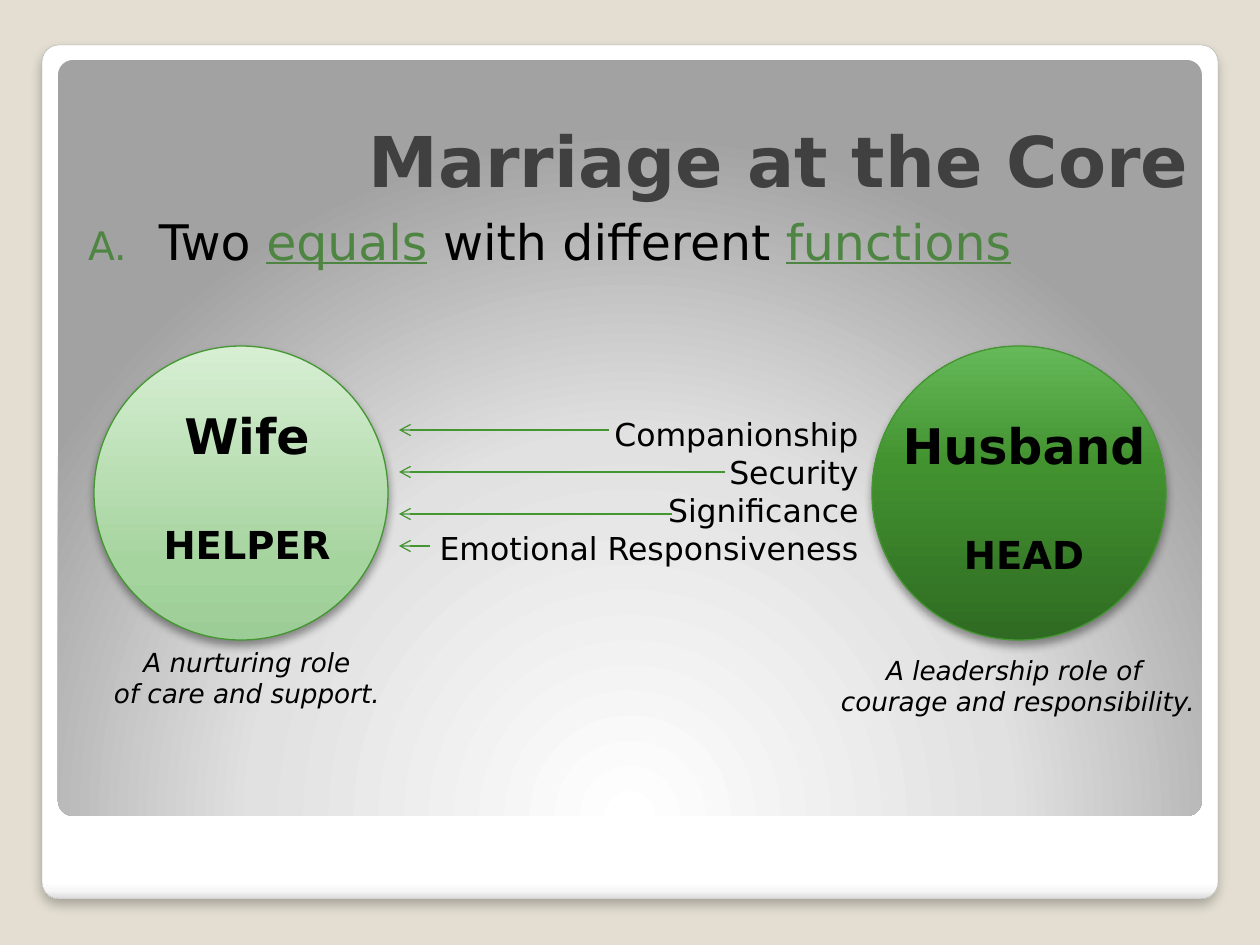
from lxml.etree import SubElement
from pptx import Presentation
from pptx.dml.color import RGBColor
from pptx.enum.shapes import MSO_CONNECTOR, MSO_SHAPE
from pptx.enum.text import MSO_ANCHOR, PP_ALIGN
from pptx.oxml import parse_xml
from pptx.oxml.ns import nsdecls, qn
from pptx.util import Emu, Pt

FONT = "DejaVu Sans"
COLORS = {"back": "E3DED1", "title": "404040", "text": "000000", "accent": "4E8542",
          "green": "439631", "edge": "A4A4A4"}

TITLE = "Marriage at the Core"
POINT = [("Two ", False), ("equals", True), (" with different ", False), ("functions", True)]

LINEAR = '<a:lin ang="{}" scaled="0"/>'
CARD_STOPS = [(0, "FFFFFF"), (98, "FFFFFF"), (99, "F7F7F7"), (100, "DADADA")]
PANEL_STOPS = [(0, "FFFFFF"), (55, "E1E1E1"), (100, "A2A2A2")]
PANEL_PATH = ('<a:path path="circle"><a:fillToRect l="50000" t="175000" '
              'r="50000" b="-75000"/></a:path>')

CIRCLE_TOP, CIRCLE_SIZE = 346, 294
ROLES = [
    {"circle_left": 94, "stops": [(0, "9DCD96"), (25, "A5D49E"), (100, "D7EED3")],
     "name": "Wife", "function": "HELPER", "name_box": (126, 399, 242, 178),
     "caption": ["A nurturing role", "of care and support."],
     "caption_box": (63, 640, 368, 77)},
    {"circle_left": 872, "stops": [(0, "2F6B22"), (60, "429230"), (100, "66B959")],
     "name": "Husband", "function": "HEAD", "name_box": (882, 409, 284, 178),
     "caption": ["A leadership role of", " courage and responsibility."],
     "caption_box": (809, 648, 410, 77)},
]

ARROW_END = 399
NEEDS = [("Companionship", 609, 430), ("Security", 725, 472),
         ("Significance", 672, 514), ("Emotional Responsiveness", 430, 546)]


def px(n):
    return Emu(round(n * 914400 / 126))


def color(key):
    return RGBColor.from_string(COLORS[key])


def style(run, size, key="text", bold=False, italic=False):
    font = run.font
    font.name, font.size, font.bold, font.italic = FONT, Pt(size), bold, italic
    font.color.rgb = color(key)


def add_panel(slide, kind, box, stops, direction, edge=None, shadow=None):
    panel = slide.shapes.add_shape(kind, *map(px, box))
    if kind == MSO_SHAPE.ROUNDED_RECTANGLE:
        panel.adjustments[0] = 0.02
    panel.fill.background()
    props = panel._element.spPr
    stop_xml = "".join(f'<a:gs pos="{pos * 1000}"><a:srgbClr val="{rgb}"/></a:gs>'
                       for pos, rgb in stops)
    gradient = parse_xml(f'<a:gradFill {nsdecls("a")} rotWithShape="1">'
                         f'<a:gsLst>{stop_xml}</a:gsLst>{direction}</a:gradFill>')
    props.replace(props.find(qn("a:noFill")), gradient)
    if edge:
        panel.line.color.rgb, panel.line.width = color(edge[0]), Pt(edge[1])
    else:
        panel.line.fill.background()
    panel.shadow.inherit = False
    if shadow:
        alpha, blur, distance = shadow
        props.find(qn("a:effectLst")).append(parse_xml(
            f'<a:outerShdw {nsdecls("a")} blurRad="{Pt(blur)}" dist="{Pt(distance)}" '
            f'dir="5400000" rotWithShape="0"><a:srgbClr val="000000">'
            f'<a:alpha val="{alpha * 1000}"/></a:srgbClr></a:outerShdw>'))


def add_lines(slide, box, lines, sizes, align, **look):
    frame = slide.shapes.add_textbox(*map(px, box)).text_frame
    frame.word_wrap = True
    frame.text = "\n".join(lines)
    for paragraph, size in zip(frame.paragraphs, sizes):
        paragraph.alignment = align
        style(paragraph.runs[0], size, **look)
    return frame


def add_arrow(slide, start, y):
    arrow = slide.shapes.add_connector(MSO_CONNECTOR.STRAIGHT,
                                       px(start), px(y), px(ARROW_END), px(y))
    arrow.line.color.rgb, arrow.line.width = color("green"), Pt(0.75)
    SubElement(arrow.line._get_or_add_ln(), qn("a:tailEnd"), type="arrow")
    SubElement(arrow._element.spPr, qn("a:effectLst"))


def add_point(slide):
    frame = slide.shapes.add_textbox(px(63), px(199), px(1128), px(90)).text_frame
    frame.word_wrap = True
    frame.margin_left, frame.margin_top = px(25), px(13)
    paragraph = frame.paragraphs[0]
    paragraph.space_before = Pt(2.5)
    for words, key_word in POINT:
        run = paragraph.add_run()
        run.text = words
        style(run, 28, "accent" if key_word else "text")
        run.font.underline = key_word
    props = paragraph._p.get_or_add_pPr()
    props.set("marL", str(px(71)))
    props.set("indent", str(-px(71)))
    bullet_color = SubElement(props, qn("a:buClr"))
    SubElement(bullet_color, qn("a:srgbClr"), val=COLORS["accent"])
    SubElement(props, qn("a:buSzPct"), val="80000")
    SubElement(props, qn("a:buFont"), typeface=FONT)
    SubElement(props, qn("a:buAutoNum"), type="alphaUcPeriod")


def main():
    deck = Presentation()
    deck.slide_width, deck.slide_height = px(1260), px(945)
    slide = deck.slides.add_slide(deck.slide_layouts[5])
    slide.background.fill.solid()
    slide.background.fill.fore_color.rgb = color("back")

    add_panel(slide, MSO_SHAPE.ROUNDED_RECTANGLE, (42, 45, 1176, 854), CARD_STOPS,
              LINEAR.format(5400000), ("edge", 0.16), (25, 6, 4))
    add_panel(slide, MSO_SHAPE.ROUNDED_RECTANGLE, (58, 60, 1144, 756), PANEL_STOPS, PANEL_PATH)

    title = slide.shapes.title
    slide.shapes._spTree.append(title._element)
    title.left, title.top, title.width, title.height = map(px, (73, 63, 1128, 145))
    title.text_frame.text = TITLE
    title.text_frame.vertical_anchor = MSO_ANCHOR.BOTTOM
    title.text_frame.paragraphs[0].alignment = PP_ALIGN.RIGHT
    style(title.text_frame.paragraphs[0].runs[0], 40, "title", bold=True)
    add_point(slide)

    for role in ROLES:
        add_panel(slide, MSO_SHAPE.OVAL,
                  (role["circle_left"], CIRCLE_TOP, CIRCLE_SIZE, CIRCLE_SIZE),
                  role["stops"], LINEAR.format(16200000), ("green", 0.75), (40, 5.2, 3))
        label = add_lines(slide, role["name_box"], [role["name"], role["function"]],
                          [28, 22], PP_ALIGN.CENTER, bold=True)
        label.paragraphs[1].space_before = Pt(32.6)
        add_lines(slide, role["caption_box"], role["caption"], [15, 15],
                  PP_ALIGN.CENTER, italic=True)

    add_lines(slide, (420, 409, 451, 165), [need for need, _, _ in NEEDS],
              [18] * len(NEEDS), PP_ALIGN.RIGHT)
    for _, start, y in NEEDS:
        add_arrow(slide, start, y)

    deck.save("out.pptx")


if __name__ == "__main__":
    main()
